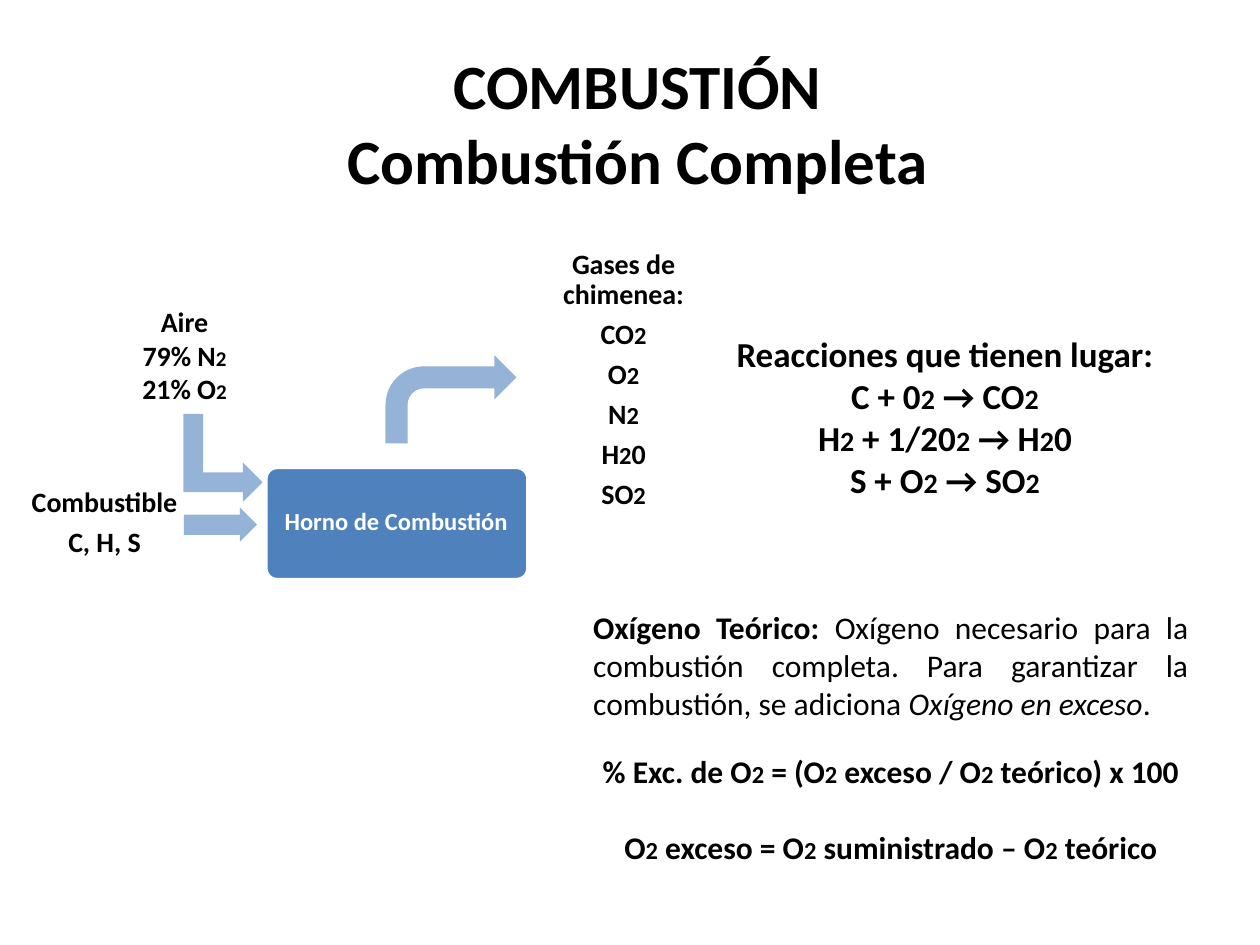
from pptx import Presentation, util as u
from pptx.dml.color import RGBColor
from pptx.enum import shapes, text

PX = 9144  # EMU per px, 100 px to the inch


class Theme:
    font = "Calibri"
    black = RGBColor(0, 0, 0)
    white = RGBColor(255, 255, 255)
    box = RGBColor(0x4F, 0x81, 0xBD)
    arrow = RGBColor(0x95, 0xB3, 0xD7)
    title, reaction, body, label, box_text = 36, 20, 18, 16, 14


# Content: "_" makes the next character a small digit
TITLE = ["COMBUSTIÓN\nCombustión Completa"]
REACTIONS = ["Reacciones que tienen lugar:", "C + 0_2 → CO_2",
             "H_2 + 1/20_2 → H_20", "S + O_2 → SO_2"]
FUEL = ["Combustible", "C, H, S"]
FURNACE = ["Horno de Combustión"]
GASES = ["Gases de chimenea:", "CO_2", "O_2", "N_2", "H_20", "SO_2"]
AIR = ["Aire", "79% N_2", "21% O_2"]
OXYGEN = [("Oxígeno Teórico: ", True, False),
          ("Oxígeno necesario para la combustión completa. Para garantizar la "
           "combustión, se adiciona ", False, False),
          ("Oxígeno en exceso", False, True),
          (".", False, False)]
FORMULAS = ["% Exc. de O_2 = (O_2 exceso / O_2 teórico) x 100",
            "O_2 exceso = O_2 suministrado – O_2 teórico"]
FORMULA_GAPS = [17, 22]  # points before each formula

# Arrows: preset, left, top, width, height, rotation, adjustments
ARROWS = [
    (shapes.MSO_SHAPE.RIGHT_ARROW, 146, 403, 58, 27, 0, [0.6, 0.5]),
    (shapes.MSO_SHAPE.BENT_ARROW, 306, 282, 104, 70, 0, []),
    (shapes.MSO_SHAPE.BENT_UP_ARROW, 142, 332, 70, 63, 90, [0.25] * 3),
]

prs = Presentation()
prs.slide_width, prs.slide_height = 1000 * PX, 750 * PX
s = prs.slides.add_slide(prs.slide_layouts[6])


def add_run(p, words, size, color=Theme.black, bold=True, italic=False):
    r = p.add_run()
    r.text = words
    f = r.font
    f.name, f.size, f.bold, f.italic = Theme.font, u.Pt(size), bold, italic
    f.color.rgb = color


def add_line(p, line, size, small, color=Theme.black):
    p.alignment = text.PP_ALIGN.CENTER
    for i, row in enumerate(line.split("\n")):
        if i:
            p.add_line_break()
        first, *rest = row.split("_")
        add_run(p, first, size, color)
        for part in rest:
            add_run(p, part[0], small, color)
            if part[1:]:
                add_run(p, part[1:], size, color)


def add_frame(left, top, width, height, middle=False, inset=None):
    sp = s.shapes.add_textbox(left * PX, top * PX, width * PX, height * PX)
    tf = sp.text_frame
    tf.word_wrap = True
    if middle:
        tf.vertical_anchor = text.MSO_ANCHOR.MIDDLE
    if inset is not None:
        tf.margin_left = tf.margin_right = inset * PX
        tf.margin_top = tf.margin_bottom = inset * PX
    return tf


def add_lines(tf, lines, size, small=None, color=Theme.black, spaced=False):
    for i, line in enumerate(lines):
        p = tf.add_paragraph() if i else tf.paragraphs[0]
        if spaced:
            p.line_spacing = 0.9
            p.space_after = u.Pt(round(size * 0.35, 1))
        add_line(p, line, size, small, color)


def add_shape(preset, left, top, width, height, fill, adjustments):
    sp = s.shapes.add_shape(preset, left * PX, top * PX, width * PX, height * PX)
    sp.shadow.inherit = False
    sp.fill.solid()
    sp.fill.fore_color.rgb = fill
    sp.line.fill.background()
    for i, value in enumerate(adjustments):
        sp.adjustments[i] = value
    return sp


# Title and reactions
add_lines(add_frame(56, 34, 900, 125, middle=True), TITLE, Theme.title)
add_lines(add_frame(500, 259, 500, 145), REACTIONS, Theme.reaction, 16)

# Furnace diagram
furnace = add_shape(shapes.MSO_SHAPE.ROUNDED_RECTANGLE, 211, 371, 208, 89,
                    Theme.box, [0.1])
furnace.line.color.rgb = Theme.white
furnace.line.width = u.Pt(2)
for preset, left, top, width, height, rotation, adjustments in ARROWS:
    sp = add_shape(preset, left, top, width, height, Theme.arrow, adjustments)
    sp.rotation = rotation
add_lines(add_frame(15, 369, 136, 93, True, 7), FUEL, Theme.label, spaced=True)
add_lines(add_frame(213, 373, 203, 84, True, 6), FURNACE, Theme.box_text,
          color=Theme.white, spaced=True)
add_lines(add_frame(428, 197, 134, 210, True, 7), GASES, Theme.label, 14,
          spaced=True)
add_lines(add_frame(56, 237, 181, 94), AIR, Theme.label, 12)

# Theoretical and excess oxygen
tf = add_frame(461, 478, 492, 215)
p = tf.paragraphs[0]
p.alignment = text.PP_ALIGN.JUSTIFY
for words, bold, italic in OXYGEN:
    add_run(p, words, Theme.body, bold=bold, italic=italic)
for formula, gap in zip(FORMULAS, FORMULA_GAPS):
    p = tf.add_paragraph()
    p.space_before = u.Pt(gap)
    add_line(p, formula, Theme.body, 14)

prs.save("out.pptx")
